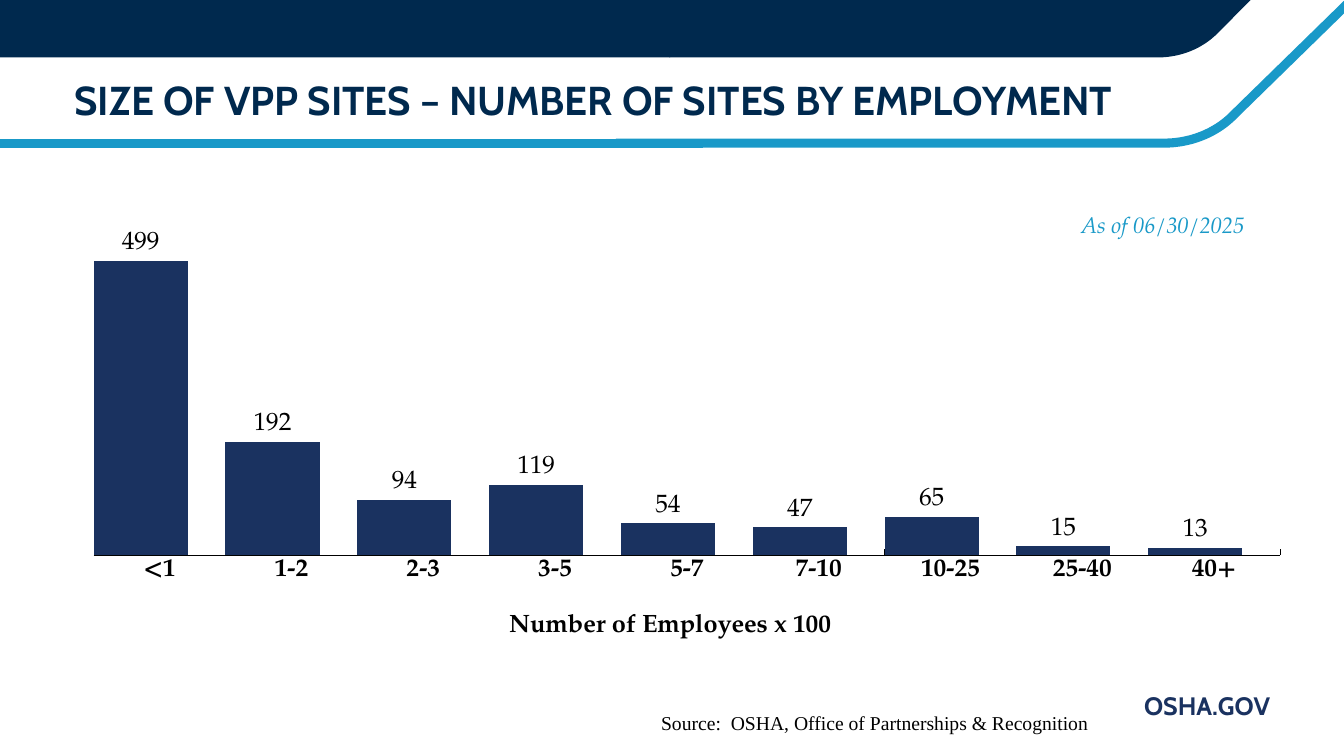
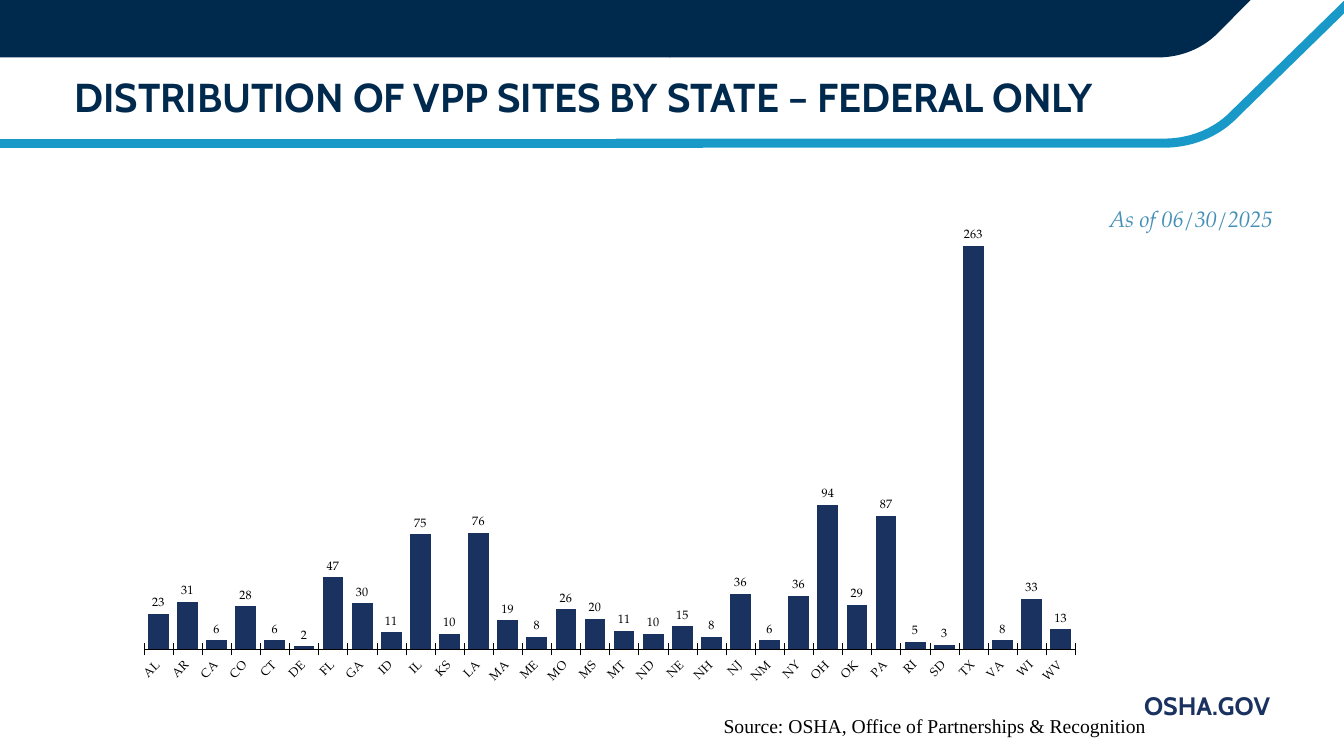
import dataclasses

import pptx
import pptx.chart.data
import pptx.dml.color
import pptx.enum.chart
import pptx.enum.shapes
import pptx.enum.text
import pptx.oxml
import pptx.oxml.ns
import pptx.util


@dataclasses.dataclass(frozen=True)
class Theme:
    navy: str = "00294E"
    bar: str = "1A3260"
    sky: str = "1999C8"
    steel: str = "4590B8"
    aqua: str = "45CBE8"
    black: str = "000000"
    heading: str = "Cabin"
    body: str = "TeX Gyre Pagella"
    serif: str = "Times New Roman"
    title_size: float = 28.8
    footer_size: float = 18
    date_size: float = 16
    source_size: float = 14
    large_chart_size: float = 18.1
    small_chart_size: float = 8.7


THEME = Theme()
BLANK_LAYOUT = 6
EMPLOYMENT = {
    "<1": 499, "1-2": 192, "2-3": 94, "3-5": 119, "5-7": 54,
    "7-10": 47, "10-25": 65, "25-40": 15, "40+": 13,
}
STATES = {
    "AL": 23, "AR": 31, "CA": 6, "CO": 28, "CT": 6, "DE": 2, "FL": 47, "GA": 30,
    "ID": 11, "IL": 75, "KS": 10, "LA": 76, "MA": 19, "ME": 8, "MO": 26, "MS": 20,
    "MT": 12, "ND": 10, "NE": 15, "NH": 8, "NJ": 36, "NM": 6, "NY": 35, "OH": 94,
    "OK": 29, "PA": 87, "RI": 5, "SD": 3, "TX": 263, "VA": 6, "WI": 33, "WV": 13,
}
# Labels that differ from the plotted value
STATE_LABELS = {"MT": "11", "NY": "36", "VA": "8"}


def inches(values):
    return [pptx.util.Inches(v) for v in values]


def rgb(color):
    return pptx.dml.color.RGBColor.from_string(color)


def style_font(font, name, size, color, bold=False, italic=False):
    font.name = name
    font.size = pptx.util.Pt(size)
    font.color.rgb = rgb(color)
    font.bold = bold
    font.italic = italic


def add_text(s, box, text, name, size, color, align="LEFT", anchor="TOP", **style):
    tf = s.shapes.add_textbox(*inches(box)).text_frame
    tf.word_wrap = True
    tf.vertical_anchor = getattr(pptx.enum.text.MSO_ANCHOR, anchor)
    p = tf.paragraphs[0]
    p.text = text
    p.alignment = getattr(pptx.enum.text.PP_ALIGN, align)
    style_font(p.font, name, size, color, **style)


def bezier(a, b, c, d, steps=24):
    """Points on a cubic curve, both ends included."""
    points = []
    for i in range(steps + 1):
        t = i / steps
        weights = ((1 - t) ** 3, 3 * t * (1 - t) ** 2, 3 * t * t * (1 - t), t ** 3)
        points.append(tuple(sum(w * q[k] for w, q in zip(weights, (a, b, c, d)))
                            for k in (0, 1)))
    return points


def add_outline(s, points, close):
    first, *rest = [inches(point) for point in points]
    builder = s.shapes.build_freeform(*first)
    builder.add_line_segments(rest, close=close)
    return builder.convert_to_shape()


def add_header_band(s):
    curve = bezier((11.48, 0.57), (11.72, 0.57), (11.94, 0.48), (12.1, 0.31))
    parts = [add_outline(s, [(6.64, -0.87), (6.64, 0.57), *curve, (13.27, -0.87)],
                         close=True)]
    for box in ((-0.02, -0.87, 6.67, 1.44), (6.36, -0.89, 0.54, 1.44)):
        parts.append(s.shapes.add_shape(pptx.enum.shapes.MSO_SHAPE.RECTANGLE,
                                        *inches(box)))
    for sp in parts:
        sp.shadow.inherit = False
        sp.fill.solid()
        sp.fill.fore_color.rgb = rgb(THEME.navy)
        sp.line.fill.background()


def set_sky_line(sp, width):
    sp.line.color.rgb = rgb(THEME.sky)
    sp.line.width = pptx.util.Pt(width)


def add_rule(s, x1, x2, y, width):
    rule = s.shapes.add_connector(pptx.enum.shapes.MSO_CONNECTOR.STRAIGHT,
                                  *inches((x1, y, x2, y)))
    set_sky_line(rule, width)
    rule._element.spPr.append(pptx.oxml.parse_xml(
        f'<a:effectLst {pptx.oxml.ns.nsdecls("a")}/>'))


def add_swoosh(s):
    curve = bezier((12.25, 1.13), (12.07, 1.32), (11.81, 1.42), (11.55, 1.42))
    swoosh = add_outline(s, [(13.57, -0.16), *curve, (6.11, 1.42)], close=False)
    swoosh.shadow.inherit = False
    swoosh.fill.background()
    set_sky_line(swoosh, 6.5)
    add_rule(s, -0.02, 6.11, 1.42, 6.5)


def add_frame(prs, title, title_top):
    """Add a slide with the shared bands, footer and title."""
    s = prs.slides.add_slide(prs.slide_layouts[BLANK_LAYOUT])
    add_text(s, (6.03, 6.8, 6.67, 0.4), "OSHA.GOV", THEME.heading,
             THEME.footer_size, THEME.bar, align="RIGHT", bold=True)
    add_swoosh(s)
    add_header_band(s)
    add_rule(s, 5.25, 6.97, 1.43, 5.5)
    add_text(s, (0.64, title_top, 10.9, 0.56), title, THEME.heading,
             THEME.title_size, THEME.navy, anchor="MIDDLE", bold=True)
    return s


def add_date_and_source(s, date_box, date_color, source_box, source):
    add_text(s, date_box, "As of 06/30/2025", THEME.body, THEME.date_size, date_color,
             align="CENTER", anchor="MIDDLE", italic=True)
    add_text(s, source_box, source, THEME.serif, THEME.source_size, THEME.black)


def layout_xml(x, y, w=None, h=None):
    """Manual chart layout; a size makes it an inner plot area."""
    parts = ['<c:layoutTarget val="inner"/>'] if w else []
    parts += ['<c:xMode val="edge"/><c:yMode val="edge"/>']
    parts += [f'<c:{tag} val="{v}"/>' for tag, v in zip("xywh", (x, y, w, h)) if v]
    return pptx.oxml.parse_xml(
        f'<c:layout {pptx.oxml.ns.nsdecls("c")}><c:manualLayout>'
        f'{"".join(parts)}</c:manualLayout></c:layout>')


def set_plot_layout(chart, plot_box):
    qn = pptx.oxml.ns.qn
    c = chart._chartSpace.find(qn("c:chart"))
    area = c.find(qn("c:plotArea"))
    for old in area.findall(qn("c:layout")):
        area.remove(old)
    area.insert(0, layout_xml(*plot_box))
    c.addnext(pptx.oxml.parse_xml(
        f'<c:spPr {pptx.oxml.ns.nsdecls("c", "a")}><a:noFill/>'
        '<a:ln><a:noFill/></a:ln></c:spPr>'))


def add_column_chart(s, box, plot_box, values, colors, size, maximum, gap, overlap,
                     tick, bold=False):
    """Add columns; colours after the first stand for empty series."""
    enums = pptx.enum.chart
    data = pptx.chart.data.CategoryChartData()
    data.categories = list(values)
    for i in range(len(colors)):
        data.add_series(f"Series {i + 1}",
                        [None] * len(values) if i else list(values.values()))
    chart = s.shapes.add_chart(enums.XL_CHART_TYPE.COLUMN_CLUSTERED,
                               *inches(box), data).chart
    chart.has_title = chart.has_legend = False
    style_font(chart.font, THEME.body, size, THEME.black, bold=bold)
    set_plot_layout(chart, plot_box)

    plot = chart.plots[0]
    plot.vary_by_categories = False
    plot.gap_width, plot.overlap = gap, overlap
    for series, color in zip(plot.series, colors):
        series.format.fill.solid()
        series.format.fill.fore_color.rgb = rgb(color)
    labels = plot.series[0].data_labels
    labels.show_value = True
    labels.position = enums.XL_LABEL_POSITION.OUTSIDE_END
    style_font(labels.font, THEME.body, size, THEME.black)

    axis = chart.value_axis
    axis.minimum_scale, axis.maximum_scale = 0, maximum
    axis.has_major_gridlines = False
    axis.major_tick_mark = enums.XL_TICK_MARK.NONE
    axis.tick_label_position = enums.XL_TICK_LABEL_POSITION.NONE
    axis.format.line.fill.background()
    axis = chart.category_axis
    axis.major_tick_mark = tick
    axis.format.line.color.rgb = rgb(THEME.black)
    axis.format.line.width = pptx.util.Pt(0.25)
    style_font(axis.tick_labels.font, THEME.body, size, THEME.black, bold=bold)
    return chart


def title_category_axis(chart, text, x, y):
    title = chart.category_axis.axis_title
    r = title.text_frame.paragraphs[0].add_run()
    r.text = text
    style_font(r.font, THEME.body, THEME.large_chart_size, THEME.black, bold=True)
    qn = pptx.oxml.ns.qn
    for old in title._element.findall(qn("c:layout")):
        title._element.remove(old)
    title._element.find(qn("c:tx")).addnext(layout_xml(x, y))


def override_labels(chart, texts, size):
    names = list(chart.plots[0].categories)
    for name, text in texts.items():
        label = chart.plots[0].series[0].points[names.index(name)].data_label
        r = label.text_frame.paragraphs[0].add_run()
        r.text = text
        style_font(r.font, THEME.body, size, THEME.black)
        label.position = pptx.enum.chart.XL_LABEL_POSITION.OUTSIDE_END


def employment_slide(prs):
    s = add_frame(prs, "SIZE OF VPP SITES – NUMBER OF SITES BY EMPLOYMENT", 0.71)
    chart = add_column_chart(
        s, (0.64, 1.77, 12.06, 4.64), (0.024, 0.05, 0.976, 0.765), EMPLOYMENT,
        (THEME.bar, THEME.steel, THEME.aqua), THEME.large_chart_size, maximum=600,
        gap=0, overlap=80, tick=pptx.enum.chart.XL_TICK_MARK.INSIDE, bold=True)
    title_category_axis(chart, "Number of Employees x 100", 0.362, 0.927)
    add_date_and_source(s, (10.12, 1.85, 2.83, 0.75), THEME.sky, (6.46, 7, 5.12, 0.33),
                        "Source:  OSHA, Office of Partnerships & Recognition")


def state_slide(prs):
    s = add_frame(prs, "DISTRIBUTION OF VPP SITES BY STATE – FEDERAL ONLY", 0.68)
    chart = add_column_chart(
        s, (1.38, 0.26, 9.42, 6.67), (0.005, 0.242, 0.981, 0.685), STATES,
        (THEME.bar,), THEME.small_chart_size, maximum=300, gap=40, overlap=0,
        tick=pptx.enum.chart.XL_TICK_MARK.CROSS)
    override_labels(chart, STATE_LABELS, THEME.small_chart_size)
    qn = pptx.oxml.ns.qn
    body = chart.category_axis._element.find(qn("c:txPr")).find(qn("a:bodyPr"))
    body.set("rot", "-2700000")
    add_date_and_source(s, (10.69, 1.79, 2.25, 0.75), THEME.steel,
                        (7.08, 7.03, 4.5, 0.33),
                        "Source: OSHA, Office of Partnerships & Recognition")


def main():
    prs = pptx.Presentation()
    prs.slide_width, prs.slide_height = inches((40 / 3, 7.5))
    employment_slide(prs)
    state_slide(prs)
    prs.save("out.pptx")


if __name__ == "__main__":
    main()
